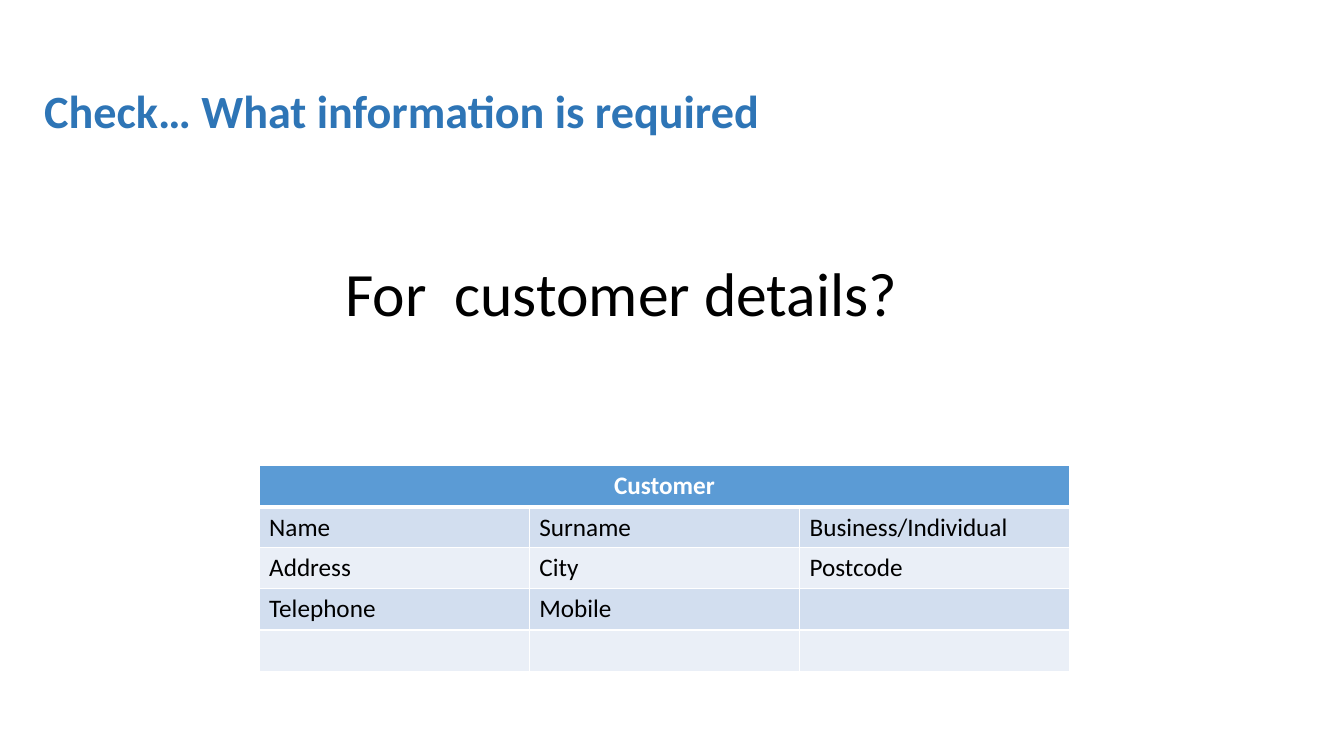
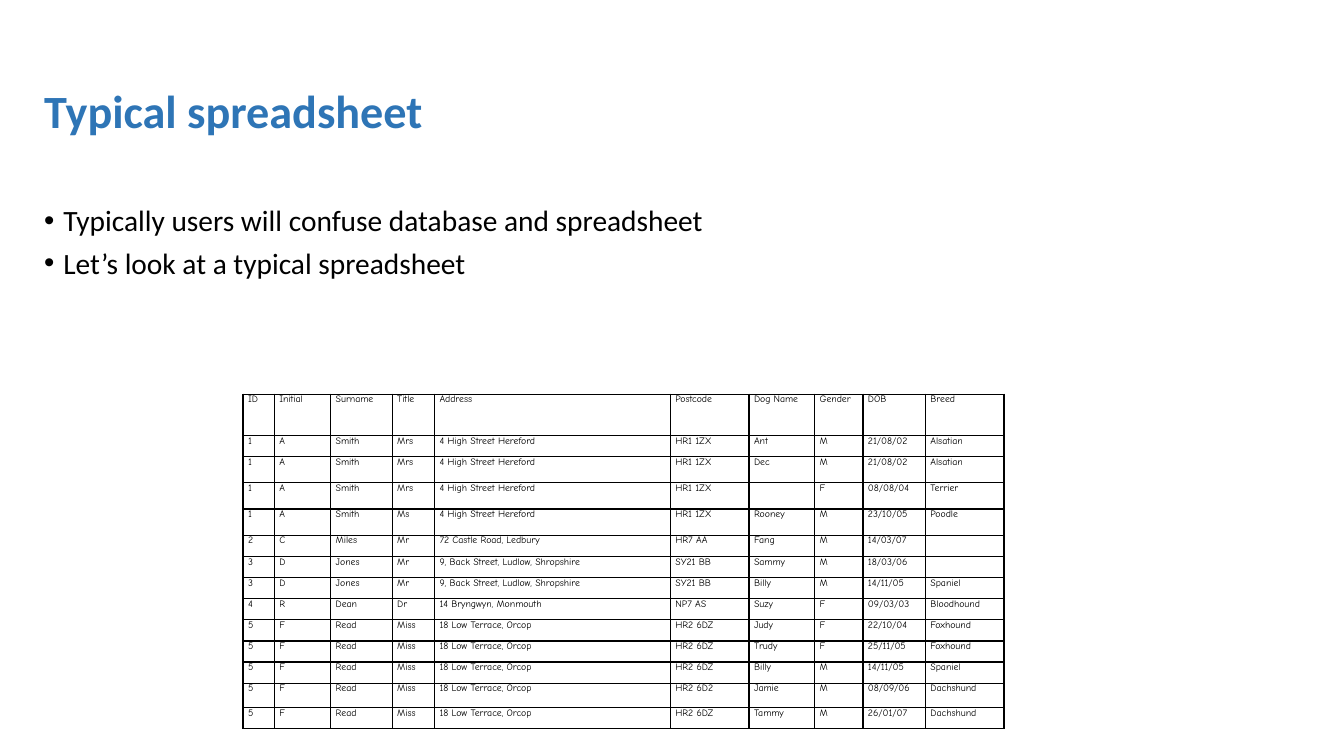
from dataclasses import dataclass
from typing import NamedTuple

from lxml.etree import SubElement
from pptx import Presentation
from pptx.dml.color import RGBColor
from pptx.enum.text import MSO_ANCHOR, PP_ALIGN
from pptx.oxml.ns import qn
from pptx.presentation import Presentation as Deck
from pptx.slide import Slide
from pptx.table import _Cell as Cell
from pptx.text.text import _Paragraph as Paragraph
from pptx.util import Emu, Pt

EMU_PER_PX = 9144  # 100 px to the inch

WHITE = RGBColor(0xFF, 0xFF, 0xFF)
BLACK = RGBColor(0x00, 0x00, 0x00)
TITLE_BLUE = RGBColor(0x2E, 0x75, 0xB6)
HEADER_BLUE = RGBColor(0x5B, 0x9B, 0xD5)
BAND_DARK = RGBColor(0xD2, 0xDE, 0xEF)
BAND_LIGHT = RGBColor(0xEA, 0xEF, 0xF7)


class Area(NamedTuple):
    left: int
    top: int
    width: int
    height: int


class Margins(NamedTuple):
    side: int
    end: int


@dataclass(frozen=True)
class TextStyle:
    size: int
    font: str = "Calibri"
    color: RGBColor = BLACK
    bold: bool = False
    align: PP_ALIGN = PP_ALIGN.LEFT


@dataclass(frozen=True)
class CellStyle:
    text: TextStyle
    border: RGBColor
    fill: RGBColor | None = None
    margins: Margins = Margins(10, 5)
    top_line: int = 1
    bottom_line: int = 1


@dataclass(frozen=True)
class Grid:
    left: int
    top: int
    widths: list[int]
    heights: list[int]
    rows: list[tuple[str, ...]]
    styles: list[CellStyle]


TITLE_AREA = Area(34, 40, 1268, 145)
QUESTION_AREA = Area(222, 256, 789, 119)
BULLET_AREA = Area(34, 200, 1268, 540)
BULLET_INDENT = 19

TITLE_STYLE = TextStyle(33, color=TITLE_BLUE, bold=True)
QUESTION_STYLE = TextStyle(44, align=PP_ALIGN.CENTER)
BULLET_STYLE = TextStyle(21)
FIELD_STYLE = TextStyle(18)
HEADER_STYLE = TextStyle(18, color=WHITE, bold=True, align=PP_ALIGN.CENTER)
SHEET_STYLE = CellStyle(TextStyle(7, "Comic Neue"), BLACK, margins=Margins(5, 0))

CUSTOMER_GRID = Grid(
    257, 462, [268] * 3, [41] + [40] + [41] * 3,
    [
        ("Customer", "", ""),
        ("Name", "Surname", "Business/Individual"),
        ("Address", "City", "Postcode"),
        ("Telephone", "Mobile", ""),
        ("", "", ""),
    ],
    [
        CellStyle(HEADER_STYLE, WHITE, HEADER_BLUE, bottom_line=3),
        CellStyle(FIELD_STYLE, WHITE, BAND_DARK, top_line=3),
        CellStyle(FIELD_STYLE, WHITE, BAND_LIGHT),
        CellStyle(FIELD_STYLE, WHITE, BAND_DARK),
        CellStyle(FIELD_STYLE, WHITE, BAND_LIGHT),
    ],
)

SMITH_HOME = ("4 High Street Hereford", "HR1 1ZX")
SMITH = ("1", "A", "Smith", "Mrs", *SMITH_HOME)
JONES = ("3", "D", "Jones", "Mr", "9, Back Street, Ludlow, Shropshire", "SY21 BB")
READ_NAME = ("5", "F", "Read", "Miss", "18 Low Terrace, Orcop")
READ = (*READ_NAME, "HR2 6DZ")

DOG_ROWS = [
    ("ID", "Initial", "Surname", "Title", "Address", "Postcode",
     "Dog Name", "Gender", "DOB", "Breed"),
    (*SMITH, "Ant", "M", "21/08/02", "Alsatian"),
    (*SMITH, "Dec", "M", "21/08/02", "Alsatian"),
    (*SMITH, "", "F", "08/08/04", "Terrier"),
    ("1", "A", "Smith", "Ms", *SMITH_HOME, "Rooney", "M", "23/10/05", "Poodle"),
    ("2", "C", "Miles", "Mr", "72 Castle Road, Ledbury", "HR7 AA",
     "Fang", "M", "14/03/07", ""),
    (*JONES, "Sammy", "M", "18/03/06", ""),
    (*JONES, "Billy", "M", "14/11/05", "Spaniel"),
    ("4", "R", "Dean", "Dr", "14 Bryngwyn, Monmouth", "NP7 AS",
     "Suzy", "F", "09/03/03", "Bloodhound"),
    (*READ, "Judy", "F", "22/10/04", "Foxhound"),
    (*READ, "Trudy", "F", "25/11/05", "Foxhound"),
    (*READ, "Billy", "M", "14/11/05", "Spaniel"),
    (*READ_NAME, "HR2 6D2", "Jamie", "M", "08/09/06", "Dachshund"),
    (*READ, "Tammy", "M", "26/01/07", "Dachshund"),
]
DOG_GRID = Grid(
    241, 391,
    [31, 56, 61, 42, 234, 78, 65, 48, 62, 78],
    [41, 21, 26, 26, 26] + [21] * 7 + [24, 21],
    DOG_ROWS,
    [SHEET_STYLE] * len(DOG_ROWS),
)


def px(length: int) -> Emu:
    return Emu(length * EMU_PER_PX)


def write(para: Paragraph, text: str, style: TextStyle) -> None:
    para.text = text
    para.alignment = style.align
    for span in para.runs:
        span.font.name = style.font
        span.font.size = Pt(style.size)
        span.font.bold = style.bold
        span.font.color.rgb = style.color
    if not text:
        # Keeps an empty cell from growing to the default text height
        SubElement(para._p, qn("a:endParaRPr"), sz=str(style.size * 100))


def add_bullet(para: Paragraph) -> None:
    properties = para._p.get_or_add_pPr()
    properties.set("marL", str(px(BULLET_INDENT)))
    properties.set("indent", str(px(-BULLET_INDENT)))
    SubElement(properties, qn("a:buFont"), typeface="Arial")
    SubElement(properties, qn("a:buChar"), char="•")


def add_text(page: Slide, area: Area, lines: list[str], style: TextStyle,
             anchor: MSO_ANCHOR = MSO_ANCHOR.TOP, bulleted: bool = False) -> None:
    frame = page.shapes.add_textbox(*map(px, area)).text_frame
    frame.word_wrap = True
    frame.vertical_anchor = anchor
    for index, line in enumerate(lines):
        para = frame.add_paragraph() if index else frame.paragraphs[0]
        if bulleted:
            add_bullet(para)
        para.line_spacing = 0.9
        if index:
            para.space_before = Pt(7.5)
        write(para, line, style)


def add_border(cell: Cell, side: str, color: RGBColor, points: int) -> None:
    properties = cell._tc.get_or_add_tcPr()
    line = SubElement(properties, qn(f"a:ln{side}"), w=str(Pt(points)))
    SubElement(SubElement(line, qn("a:solidFill")), qn("a:srgbClr"), val=str(color))


def style_cell(cell: Cell, text: str, style: CellStyle) -> None:
    cell.margin_left = cell.margin_right = px(style.margins.side)
    cell.margin_top = cell.margin_bottom = px(style.margins.end)
    lines = {"L": 1, "R": 1, "T": style.top_line, "B": style.bottom_line}
    for side, points in lines.items():
        add_border(cell, side, style.border, points)
    if style.fill is None:
        cell.fill.background()
    else:
        cell.fill.solid()
        cell.fill.fore_color.rgb = style.fill
    write(cell.text_frame.paragraphs[0], text, style.text)


def add_grid(page: Slide, grid: Grid, merge_header: bool = False) -> None:
    area = Area(grid.left, grid.top, sum(grid.widths), sum(grid.heights))
    table = page.shapes.add_table(
        len(grid.rows), len(grid.widths), *map(px, area)).table
    table.first_row = table.horz_banding = False
    for column, width in zip(table.columns, grid.widths):
        column.width = px(width)
    for row, height, texts, style in zip(
            table.rows, grid.heights, grid.rows, grid.styles):
        row.height = px(height)
        for cell, text in zip(row.cells, texts):
            style_cell(cell, text, style)
    if merge_header:
        table.cell(0, 0).merge(table.cell(0, len(grid.widths) - 1))


def add_page(deck: Deck, title: str) -> Slide:
    page = deck.slides.add_slide(deck.slide_layouts[6])
    add_text(page, TITLE_AREA, [title], TITLE_STYLE, MSO_ANCHOR.MIDDLE)
    return page


def main() -> None:
    deck = Presentation()
    deck.slide_width, deck.slide_height = px(1333), px(750)

    customer_page = add_page(deck, "Check… What information is required")
    add_text(customer_page, QUESTION_AREA, ["For  customer details?"], QUESTION_STYLE)
    add_grid(customer_page, CUSTOMER_GRID, merge_header=True)

    spreadsheet_page = add_page(deck, "Typical spreadsheet")
    add_text(
        spreadsheet_page, BULLET_AREA,
        ["Typically users will confuse database and spreadsheet",
         "Let’s look at a typical spreadsheet"],
        BULLET_STYLE, bulleted=True)
    add_grid(spreadsheet_page, DOG_GRID)

    deck.save("out.pptx")


if __name__ == "__main__":
    main()
